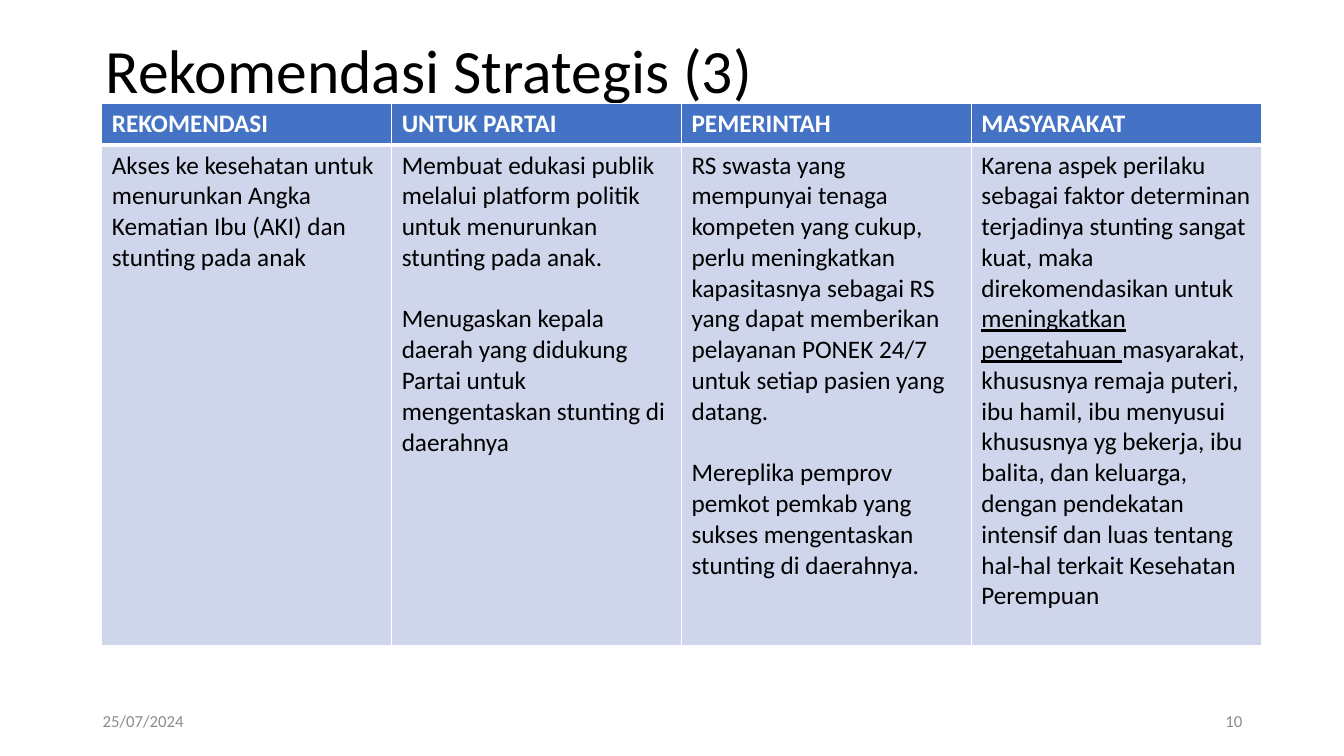
from lxml import etree
from pptx import Presentation
from pptx import util as u
from pptx.dml.color import RGBColor
from pptx.enum import text
from pptx.oxml import ns

COLORS = {"black": "000000", "white": "FFFFFF", "header": "4472C4",
          "body": "CFD5EA", "footer": "8C8C8C"}

HEADERS = ["REKOMENDASI", "UNTUK PARTAI", "PEMERINTAH", "MASYARAKAT"]
# Each cell is a list of paragraphs, each paragraph a list of (text, underline)
BODY = [
    [[("Akses ke kesehatan untuk menurunkan Angka Kematian Ibu (AKI) dan "
       "stunting pada anak", False)]],
    [[("Membuat edukasi publik melalui platform politik untuk menurunkan "
       "stunting pada anak.", False)],
     [("Menugaskan kepala daerah yang didukung Partai untuk mengentaskan "
       "stunting di daerahnya", False)]],
    [[("RS swasta yang mempunyai tenaga kompeten yang cukup, perlu "
       "meningkatkan kapasitasnya sebagai RS yang dapat memberikan pelayanan "
       "PONEK 24/7 untuk setiap pasien yang datang.", False)],
     [("Mereplika pemprov pemkot pemkab yang sukses mengentaskan stunting "
       "di daerahnya.", False)]],
    [[("Karena aspek perilaku sebagai faktor determinan terjadinya stunting "
       "sangat kuat, maka direkomendasikan untuk ", False),
      ("meningkatkan pengetahuan ", True),
      ("masyarakat, khususnya remaja puteri, ibu hamil, ibu menyusui "
       "khususnya yg bekerja, ibu balita, dan keluarga, dengan pendekatan "
       "intensif dan luas tentang hal-hal terkait Kesehatan Perempuan", False)]],
]


class Deck:
    font = "Calibri"

    def __init__(self, width, height):
        self.prs = Presentation()
        self.prs.slide_width = u.Inches(width)
        self.prs.slide_height = u.Inches(height)
        self.s = self.prs.slides.add_slide(self.prs.slide_layouts[5])

    def run(self, p, content, size, color, **fmt):
        r = p.add_run()
        r.text = content
        for name, value in {"name": self.font, "size": u.Pt(size), **fmt}.items():
            setattr(r.font, name, value)
        r.font.color.rgb = RGBColor.from_string(COLORS[color])

    def title(self, content, box):
        sp = self.s.shapes.title
        for name, value in zip(("left", "top", "width", "height"), box):
            setattr(sp, name, u.Inches(value))
        tf = sp.text_frame
        tf.word_wrap = True
        tf.vertical_anchor = text.MSO_ANCHOR.MIDDLE
        p = tf.paragraphs[0]
        p.alignment, p.line_spacing = text.PP_ALIGN.LEFT, 0.9
        self.run(p, content, 44, "black")

    def footer(self, content, box, align):
        tf = self.s.shapes.add_textbox(*map(u.Inches, box)).text_frame
        tf.word_wrap = True
        tf.vertical_anchor = text.MSO_ANCHOR.MIDDLE
        tf.paragraphs[0].alignment = align
        self.run(tf.paragraphs[0], content, 12, "footer")

    def borders(self, cell, widths):
        # Border lines come before the fill in the cell properties
        tc_pr = cell._tc.get_or_add_tcPr()
        for i, (side, width) in enumerate(widths.items()):
            ln = etree.Element(ns.qn(f"a:ln{side}"), w=str(u.Pt(width)))
            fill = etree.SubElement(ln, ns.qn("a:solidFill"))
            etree.SubElement(fill, ns.qn("a:srgbClr"), val=COLORS["white"])
            tc_pr.insert(i, ln)

    def cell(self, cell, paragraphs, fill, color, bold, widths):
        cell.fill.solid()
        cell.fill.fore_color.rgb = RGBColor.from_string(COLORS[fill])
        self.borders(cell, widths)
        tf = cell.text_frame
        for i, runs in enumerate(paragraphs):
            p = tf.add_paragraph() if i else tf.paragraphs[0]
            if i:
                p.space_before = u.Pt(22)
            for content, underline in runs:
                self.run(p, content, 18, color, bold=bold, underline=underline)

    def table(self, headers, body, box, heights):
        tbl = self.s.shapes.add_table(2, len(headers), *map(u.Inches, box)).table
        for row, height in zip(tbl.rows, heights):
            row.height = u.Inches(height)
        for col, (head, paragraphs) in enumerate(zip(headers, body)):
            self.cell(tbl.cell(0, col), [[(head, False)]], "header", "white", True,
                      {"L": 1, "R": 1, "T": 1, "B": 3})
            self.cell(tbl.cell(1, col), paragraphs, "body", "black", False,
                      {"L": 1, "R": 1, "T": 3, "B": 1})


def main():
    deck = Deck(13.33, 7.5)
    # Title
    deck.title("Rekomendasi Strategis (3)", (0.95, 0, 11.5, 1.45))
    # Recommendations by audience
    deck.table(HEADERS, BODY, (1.01, 1.03, 11.5, 5.38), (0.41, 4.97))
    # Date and slide number
    deck.footer("25/07/2024", (0.92, 6.95, 3, 0.4), text.PP_ALIGN.LEFT)
    deck.footer("10", (9.42, 6.95, 3, 0.4), text.PP_ALIGN.RIGHT)
    deck.prs.save("out.pptx")


if __name__ == "__main__":
    main()
